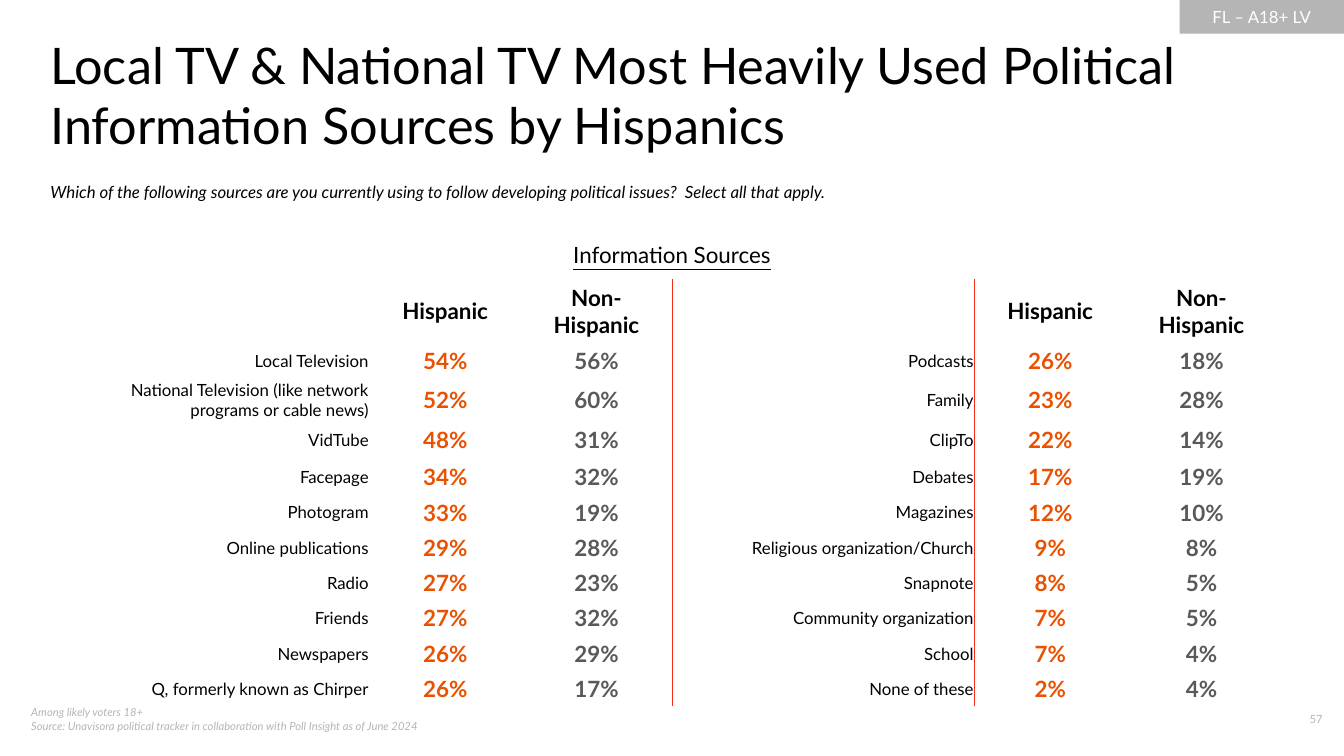
"""Build the slide on political information sources by Hispanic audience."""
from lxml import etree
from pptx import Presentation, util as u
from pptx.dml.color import RGBColor
from pptx.enum import shapes, text
from pptx.oxml import ns

BLACK = RGBColor(0x00, 0x00, 0x00)
WHITE = RGBColor(0xFF, 0xFF, 0xFF)
SILVER = RGBColor(0xB5, 0xB5, 0xB5)
GRAY = RGBColor(0x59, 0x59, 0x59)
ORANGE = RGBColor(0xEA, 0x51, 0x01)
RED = RGBColor(0xF5, 0x2D, 0x1F)

LEFT, CENTER, RIGHT = text.PP_ALIGN.LEFT, text.PP_ALIGN.CENTER, text.PP_ALIGN.RIGHT
TOP, MIDDLE = text.MSO_ANCHOR.TOP, text.MSO_ANCHOR.MIDDLE
NO_GRID_STYLE = "{2D5ABB26-0587-4C30-8999-92F81FD0307C}"

deck = Presentation()
deck.slide_width, deck.slide_height = u.Inches(13.33), u.Inches(7.5)
slide = deck.slides.add_slide(deck.slide_layouts[6])
UNIT = deck.slide_height / 45


def write(frame, content, size=12, color=BLACK, align=LEFT, bold=False, italic=False, underline=False):
    frame.word_wrap = True
    paragraph = frame.paragraphs[0]
    paragraph.text = content
    paragraph.alignment = align
    for font in [paragraph.font] + [run.font for run in paragraph.runs]:
        font.name, font.size, font.color.rgb = "Lato", u.Pt(size), color
        font.bold, font.italic, font.underline = bold, italic, underline


def grid(*units):
    return [round(count * UNIT) for count in units]


audience = slide.shapes.add_shape(shapes.MSO_SHAPE.RECTANGLE, *grid(70.2, 0, 9.78, 2))
audience.shadow.inherit = False
audience.fill.solid()
audience.fill.fore_color.rgb = SILVER
audience.line.fill.background()
audience.text_frame.vertical_anchor = MIDDLE
write(audience.text_frame, "FL – A18+ LV", color=WHITE, align=CENTER)

captions = [
    ((1.26, 41.7, 30.66, 2.4), 0.1, TOP,
     "Among likely voters 18+\vSource: Unavisora political tracker in collaboration with Poll Insight as of June 2024",
     dict(size=8, color=SILVER, italic=True)),
    ((74, 42.1, 5.3, 1.6), 0.1, TOP, "57", dict(size=8, color=SILVER, align=RIGHT)),
    ((3, 2, 72, 7.26), 0, TOP,
     "Local TV & National TV Most Heavily Used Political Information Sources by Hispanics", dict(size=36)),
    ((3, 10.8, 66, 1.2), 0, TOP,
     "Which of the following sources are you currently using to follow developing political issues?  Select all that apply.",
     dict(italic=True)),
    ((24.3, 13.74, 31.38, 2.88), 0.1, MIDDLE, "Information Sources",
     dict(size=16, align=CENTER, underline=True)),
]
for area, inset, anchor, content, style in captions:
    frame = slide.shapes.add_textbox(*grid(*area)).text_frame
    frame.margin_left = frame.margin_right = u.Inches(inset)
    frame.margin_top = frame.margin_bottom = u.Inches(inset / 2)
    frame.vertical_anchor = anchor
    write(frame, content, **style)

sources = [
    ("", "Hispanic", "Non-Hispanic", "", "Hispanic", "Non-Hispanic"),
    ("Local Television", "54%", "56%", "Podcasts", "26%", "18%"),
    ("National Television (like network programs or cable news)", "52%", "60%", "Family", "23%", "28%"),
    ("VidTube", "48%", "31%", "ClipTo", "22%", "14%"),
    ("Facepage", "34%", "32%", "Debates", "17%", "19%"),
    ("Photogram", "33%", "19%", "Magazines", "12%", "10%"),
    ("Online publications", "29%", "28%", "Religious organization/Church", "9%", "8%"),
    ("Radio", "27%", "23%", "Snapnote", "8%", "5%"),
    ("Friends", "27%", "32%", "Community organization", "7%", "5%"),
    ("Newspapers", "26%", "29%", "School", "7%", "4%"),
    ("Q, formerly known as Chirper", "26%", "17%", "None of these", "2%", "4%"),
]
column_units = [18, 9, 9] * 2
row_units = [3, 2.1, 2.1, 2.34] + [2.1] * 7
column_styles = [
    dict(size=12, align=RIGHT),
    dict(size=16, color=ORANGE, align=CENTER, bold=True),
    dict(size=16, color=GRAY, align=CENTER, bold=True),
]
header_style = dict(size=16, align=CENTER, bold=True)
divider_sides = {2: "a:lnR", 3: "a:lnL"}

usage = slide.shapes.add_table(
    len(sources), len(column_units), *grid(4, 16.62, sum(column_units), sum(row_units))).table
usage.first_row = usage.horz_banding = False
usage._tbl.tblPr.find(ns.qn("a:tableStyleId")).text = NO_GRID_STYLE
for column, width in zip(usage.columns, grid(*column_units)):
    column.width = width
for row, height in zip(usage.rows, grid(*row_units)):
    row.height = height

for r, entries in enumerate(sources):
    for c, entry in enumerate(entries):
        cell = usage.cell(r, c)
        cell.fill.background()
        cell.vertical_anchor = MIDDLE
        if r:
            cell.margin_left = cell.margin_right = cell.margin_top = u.Inches(0.01)
            cell.margin_bottom = 0
        write(cell.text_frame, entry, **(column_styles[c % 3] if r else header_style))
        if c in divider_sides:
            divider = etree.Element(ns.qn(divider_sides[c]), w=str(u.Pt(1)))
            ink = etree.SubElement(divider, ns.qn("a:solidFill"))
            etree.SubElement(ink, ns.qn("a:srgbClr"), val=str(RED))
            cell._tc.tcPr.insert(0, divider)

deck.save("out.pptx")
